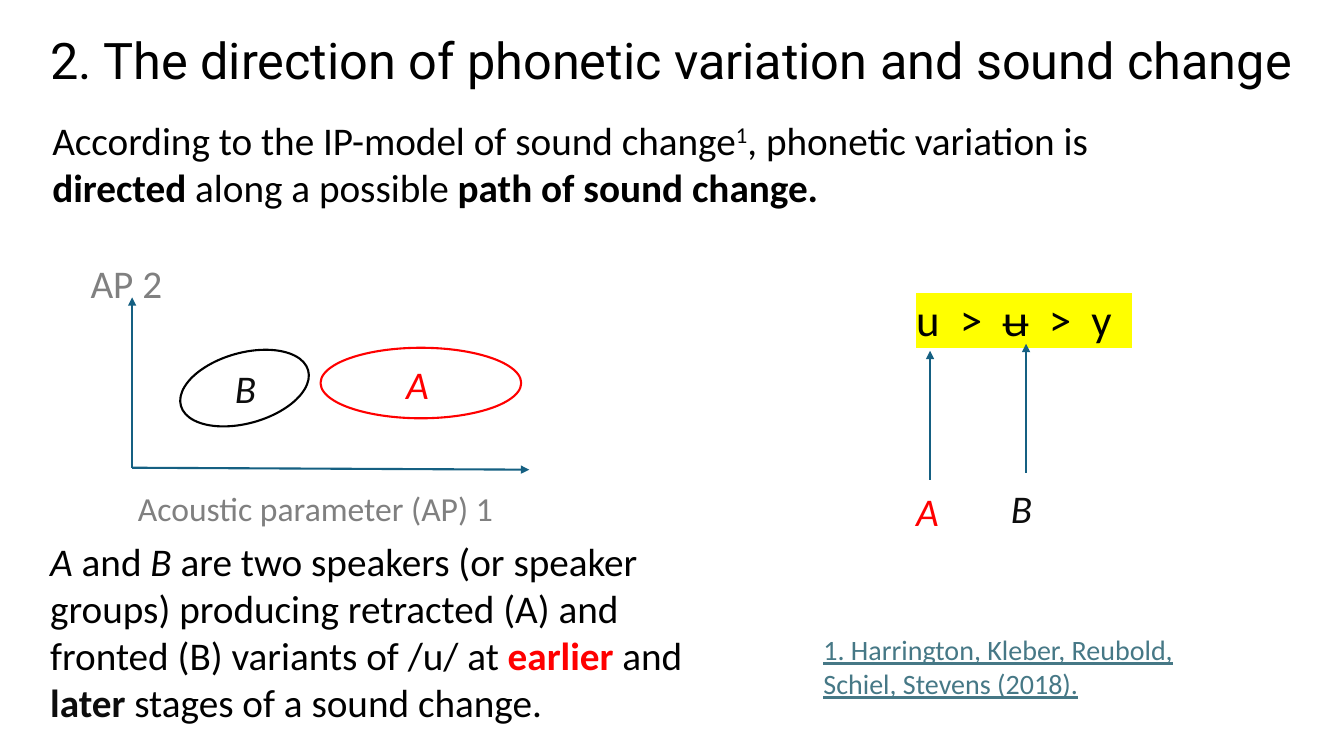
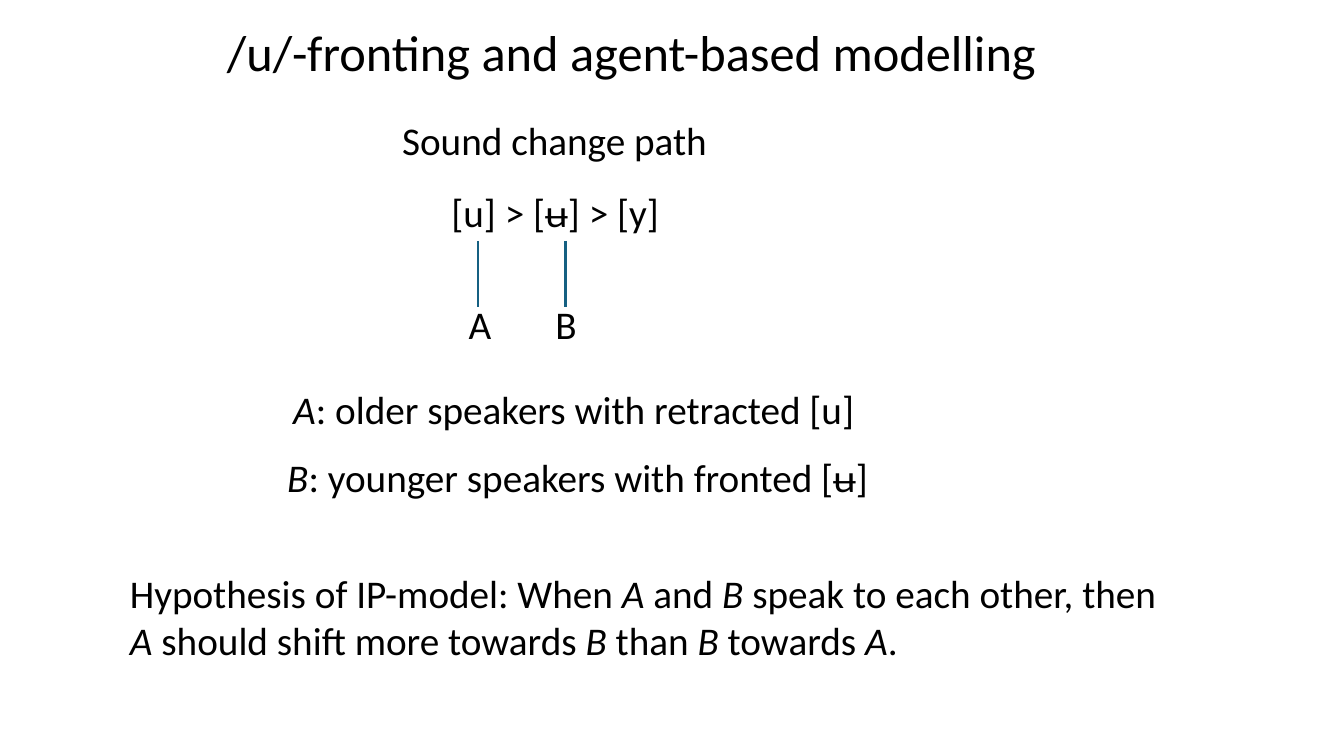
from lxml.etree import SubElement
from pptx import Presentation
from pptx.dml.color import RGBColor
from pptx.enum.shapes import MSO_CONNECTOR, MSO_SHAPE
from pptx.enum.text import MSO_ANCHOR, MSO_AUTO_SIZE, PP_ALIGN
from pptx.oxml import parse_xml
from pptx.oxml.ns import nsdecls, qn
from pptx.util import Inches, Pt

COLORS = {
    "text": "000000",
    "soft": "0D0D0D",
    "accent": "FF0000",
    "muted": "808080",
    "line": "156082",
    "citation": "467886",
    "marker": "FFFF00",
    "paper": "FFFFFF",
}
BODY_FONT = "Calibri"
LINE_WIDTH = Pt(1.5)
LABEL_HEIGHT = 7.6
ITALIC_A = ("A", {"italic": True})
ITALIC_B = ("B", {"italic": True})


def color(name):
    return RGBColor.from_string(COLORS[name])


class Deck:
    """Places elements by percentages of the slide's width and height."""

    def __init__(self):
        self.presentation = Presentation()
        self.presentation.slide_width = Inches(13.33)
        self.presentation.slide_height = Inches(7.5)
        self.slide = None

    def across(self, share):
        return round(self.presentation.slide_width * share / 100)

    def down(self, share):
        return round(self.presentation.slide_height * share / 100)

    def box(self, left, top, width, height):
        return self.across(left), self.down(top), self.across(width), self.down(height)

    def add_slide(self):
        layout = self.presentation.slide_layouts.get_by_name("Title Only")
        self.slide = self.presentation.slides.add_slide(layout)

    def title(self, place, text, font=BODY_FONT, spacing=1.0):
        shape = self.slide.shapes.title
        shape.left, shape.top, shape.width, shape.height = self.box(*place)
        frame = shape.text_frame
        frame.text = text
        frame.auto_size = MSO_AUTO_SIZE.NONE
        frame.vertical_anchor = MSO_ANCHOR.MIDDLE
        paragraph = frame.paragraphs[0]
        paragraph.alignment = PP_ALIGN.LEFT
        paragraph.line_spacing = spacing
        self.style(paragraph.runs[0], 36, font=font)

    def text(self, place, *parts, size=28, wrap=True, fill=None, **style):
        shape = self.slide.shapes.add_textbox(*self.box(*place))
        if fill:
            shape.fill.solid()
            shape.fill.fore_color.rgb = color(fill)
        frame = shape.text_frame
        frame.word_wrap = wrap
        for part in parts:
            words, changes = (part, {}) if isinstance(part, str) else part
            run = frame.paragraphs[0].add_run()
            run.text = words
            self.style(run, size, **{**style, **changes})

    def style(self, run, size, tint="text", font=BODY_FONT, bold=False, italic=False,
              underline=False, highlight=None, baseline=None):
        run.font.size = Pt(size)
        run.font.bold = bold
        run.font.italic = italic
        run.font.underline = underline
        run.font.color.rgb = color(tint)
        run.font.name = font
        properties = run._r.get_or_add_rPr()
        if baseline:
            properties.set("baseline", str(baseline * 1000))
        if highlight:
            properties.find(qn("a:solidFill")).addnext(parse_xml(
                f'<a:highlight {nsdecls("a")}><a:srgbClr val="{COLORS[highlight]}"/></a:highlight>'))

    def ellipse(self, place, tint, rotation=0):
        shape = self.slide.shapes.add_shape(MSO_SHAPE.OVAL, *self.box(*place))
        shape.shadow.inherit = False
        shape.fill.background()
        shape.line.color.rgb = color(tint)
        shape.line.width = LINE_WIDTH
        shape.rotation = rotation

    def line(self, start, end, arrow=False):
        connector = self.slide.shapes.add_connector(
            MSO_CONNECTOR.STRAIGHT, self.across(start[0]), self.down(start[1]),
            self.across(end[0]), self.down(end[1]))
        connector.line.color.rgb = color("line")
        connector.line.width = LINE_WIDTH
        properties = connector._element.spPr
        if arrow:
            SubElement(properties.find(qn("a:ln")), qn("a:tailEnd"), type="triangle")
        SubElement(properties, qn("a:effectLst"))


def build_direction_slide(deck):
    deck.add_slide()
    deck.title((3, -1.33, 97, 19.33),
               "2. The direction of phonetic variation and sound change", "Roboto", 0.9)
    deck.text((3.15, 14.67, 84.1, 13.87),
              "According to the IP-model of sound change", ("1", {"baseline": 30}),
              ", phonetic variation is ", ("directed", {"bold": True}),
              " along a possible ", ("path of sound change.", {"bold": True}))
    deck.text((3, 70.4, 51.15, 26.53), ITALIC_A, " and ", ITALIC_B,
              " are two speakers (or speaker groups) producing retracted (A) and"
              " fronted (B) variants of /u/ at ",
              ("earlier", {"bold": True, "tint": "accent"}), " and ",
              ("later", {"bold": True, "tint": "soft"}), " stages of a sound change.")

    deck.text((67.43, 37.87, 17.78, 8.53), "u  >  ʉ  >  y  ", size=32, highlight="marker")
    speakers = [
        ("A", "accent", (67.43, 63.87, 3.23), (69.2, 63.47, 46.4)),
        ("B", "soft", (74.48, 63.47, 4.28), (76.35, 62.53, 45.47)),
    ]
    for name, tint, place, (x, bottom, top) in speakers:
        deck.text((*place, LABEL_HEIGHT), name, tint=tint, italic=True, fill="paper")
        deck.line((x, bottom), (x, top), arrow=True)
    deck.text((60.53, 83.07, 32.18, 10.27),
              "1. Harrington, Kleber, Reubold, Schiel, Stevens (2018).",
              size=20, tint="citation", underline=True)

    deck.ellipse((23.85, 46, 14.93, 9.33), "accent")
    deck.ellipse((13.28, 46.67, 9.83, 9.33), "text", -15.6)
    deck.text((16.73, 47.47, 3.3, LABEL_HEIGHT), "B", tint="soft", italic=True)
    deck.text((29.48, 47.07, 3.3, LABEL_HEIGHT), "A", tint="accent", italic=True)
    origin = (9.83, 61.87)
    for axis_end in [(9.83, 39.33), (39.38, 62.13)]:
        deck.line(origin, axis_end, arrow=True)
    deck.text((9.53, 63.87, 28.13, 6.67), "Acoustic parameter (AP) 1",
              size=24, tint="muted", wrap=False)
    deck.text((6, 33.6, 10.28, LABEL_HEIGHT), "AP 2", tint="muted")


def build_modelling_slide(deck):
    deck.add_slide()
    deck.title((16.13, 2, 62.25, 9.47), "/u/-fronting and agent-based modelling")
    rows = [
        (29.18, 14.67, 24.45, ["Sound change path"]),
        (32.85, 24.27, 17.18, ["[u] > [ʉ] > [y]"]),
        (34.13, 39.07, 3.23, ["A"]),
        (40.58, 39.07, 3.15, ["B"]),
        (21.08, 50.27, 43.5, [ITALIC_A, ": older speakers with retracted [u]"]),
        (20.63, 59.33, 44.85, [ITALIC_B, ": younger speakers with fronted [ʉ]"]),
    ]
    for left, top, width, parts in rows:
        deck.text((left, top, width, LABEL_HEIGHT), *parts, wrap=False)
    for x in (35.55, 42.08):
        deck.line((x, 31.87), (x, 40.67))
    deck.text((8.93, 74.67, 79.2, 13.87), "Hypothesis of IP-model: When ", ITALIC_A, " and ",
              ITALIC_B, " speak to each other, then ", ITALIC_A, " should shift more towards ",
              ITALIC_B, " than ", ITALIC_B, " towards ", ITALIC_A, ".")


def main():
    deck = Deck()
    build_direction_slide(deck)
    build_modelling_slide(deck)
    deck.presentation.save("out.pptx")


if __name__ == "__main__":
    main()
